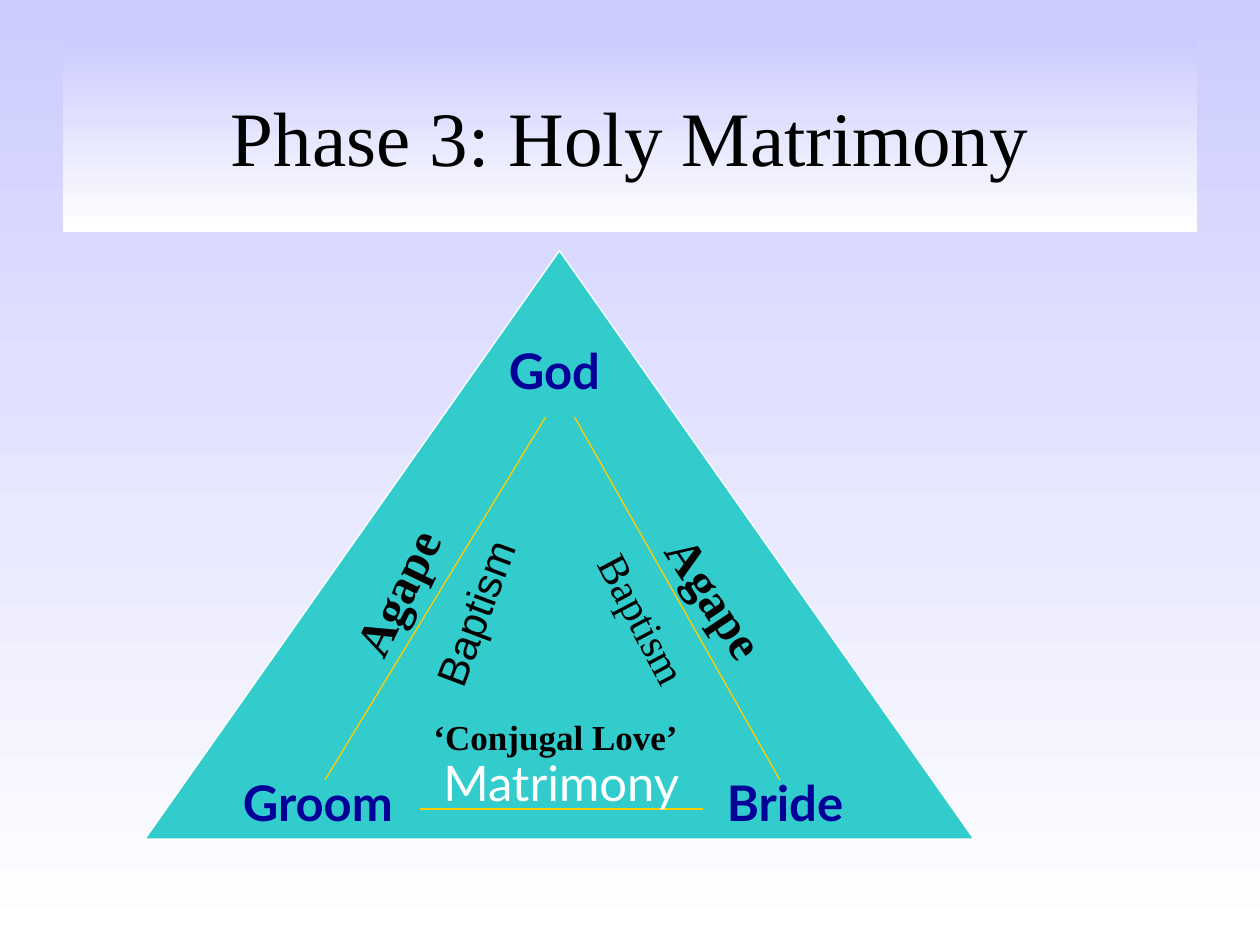
from typing import NamedTuple

from lxml import etree
from pptx import Presentation
from pptx.dml.color import RGBColor
from pptx.enum.shapes import MSO_CONNECTOR, MSO_SHAPE
from pptx.enum.text import MSO_ANCHOR, MSO_AUTO_SIZE, PP_ALIGN
from pptx.oxml.ns import qn
from pptx.util import Inches, Pt

STRAIGHT = MSO_CONNECTOR.STRAIGHT
TRIANGLE = MSO_SHAPE.ISOSCELES_TRIANGLE
MIDDLE = MSO_ANCHOR.MIDDLE
FIT_SHAPE = MSO_AUTO_SIZE.SHAPE_TO_FIT_TEXT
LEFT, CENTER = PP_ALIGN.LEFT, PP_ALIGN.CENTER

COLORS = {
    "lavender": "CCCCFF",
    "white": "FFFFFF",
    "black": "000000",
    "teal": "33CCCC",
    "navy": "000099",
    "gold": "FFCC00",
}
SERIF, SANS, LATO = "Times New Roman", "Arial", "Lato"


class Label(NamedTuple):
    text: str
    left: float
    top: float
    width: float
    height: float
    font: str = SERIF
    size: int = 28
    color: str = "black"
    bold: bool = False
    align: PP_ALIGN = LEFT
    rotation: float = 0
    wrap: bool = True


class Side(NamedTuple):
    start: tuple[float, float]
    end: tuple[float, float]


CORNER = {"font": LATO, "color": "navy", "bold": True}
LOVE = {"bold": True, "align": CENTER, "wrap": False}

LABELS = [
    Label("Groom", 1.83, 6.08, 2.08, 0.57, **CORNER),
    Label("Bride", 5.67, 6.08, 1.5, 0.57, **CORNER),
    Label("God", 3.94, 2.65, 1, 0.57, **CORNER),
    Label("Baptism", 2.93, 4.41, 1.83, 0.51, font=SANS, size=24, rotation=290.6),
    Label("Matrimony", 3.42, 5.92, 2.42, 0.57, font=LATO, color="white"),
    Label("Agape", 2.38, 4.46, 1.4, 0.42, rotation=296, **LOVE),
    Label("Agape", 5.05, 4.49, 1.4, 0.42, rotation=56.4, **LOVE),
    Label("‘Conjugal Love’", 3.34, 5.63, 2.14, 0.44, size=20, **LOVE),
    Label("Baptism", 4.43, 4.84, 1.63, 0.37, size=24, rotation=62.1),
]
SIDES = [
    Side((3.33, 6.42), (5.58, 6.42)),
    Side((2.58, 6.19), (4.33, 3.31)),
    Side((6.19, 6.19), (4.56, 3.31)),
]


def rgb(name: str) -> RGBColor:
    return RGBColor.from_string(COLORS[name])


def place(shape, left: float, top: float, width: float, height: float) -> None:
    shape.left, shape.top = Inches(left), Inches(top)
    shape.width, shape.height = Inches(width), Inches(height)


def fade_down(fill) -> None:
    """Fill with a gradient from lavender at the top to white."""
    fill.gradient()
    fill.gradient_angle = 270
    for stop, name in zip(fill.gradient_stops, ("lavender", "white")):
        stop.color.rgb = rgb(name)


def write(frame, text: str, *, font: str, size: int, color: str,
          bold: bool = False, align: PP_ALIGN = LEFT) -> None:
    para = frame.paragraphs[0]
    para.alignment = align
    span = para.add_run()
    span.text = text
    span.font.name = font
    span.font.size = Pt(size)
    span.font.bold = bold
    span.font.color.rgb = rgb(color)


def add_title(slide, text: str) -> None:
    title = slide.shapes.title
    place(title, 0.5, 0.32, 9, 1.52)
    fade_down(title.fill)
    title.text_frame.vertical_anchor = MIDDLE
    write(title.text_frame, text, font=SERIF, size=44, color="black", align=CENTER)


def add_triangle(slide) -> None:
    triangle = slide.shapes.add_shape(
        TRIANGLE, Inches(1.15), Inches(1.99), Inches(6.58), Inches(4.67))
    triangle.shadow.inherit = False
    triangle.fill.solid()
    triangle.fill.fore_color.rgb = rgb("teal")
    triangle.line.color.rgb = rgb("white")
    triangle.line.width = Pt(0.75)


def add_side(slide, side: Side) -> None:
    points = [Inches(value) for value in side.start + side.end]
    line = slide.shapes.add_connector(STRAIGHT, *points)
    line.line.color.rgb = rgb("gold")
    line.line.width = Pt(0.75)
    etree.SubElement(line._element.spPr, qn("a:effectLst"))


def add_label(slide, label: Label) -> None:
    box = slide.shapes.add_textbox(
        Inches(label.left), Inches(label.top),
        Inches(label.width), Inches(label.height))
    box.rotation = label.rotation
    box.text_frame.word_wrap = label.wrap
    box.text_frame.auto_size = FIT_SHAPE
    write(box.text_frame, label.text, font=label.font, size=label.size,
          color=label.color, bold=label.bold, align=label.align)


def main() -> None:
    deck = Presentation()
    deck.slide_width, deck.slide_height = Inches(10), Inches(7.5)
    slide = deck.slides.add_slide(deck.slide_layouts.get_by_name("Title Only"))
    fade_down(slide.background.fill)
    add_title(slide, "Phase 3: Holy Matrimony")
    add_triangle(slide)
    for side in SIDES:
        add_side(slide, side)
    for label in LABELS:
        add_label(slide, label)
    deck.save("out.pptx")


if __name__ == "__main__":
    main()
